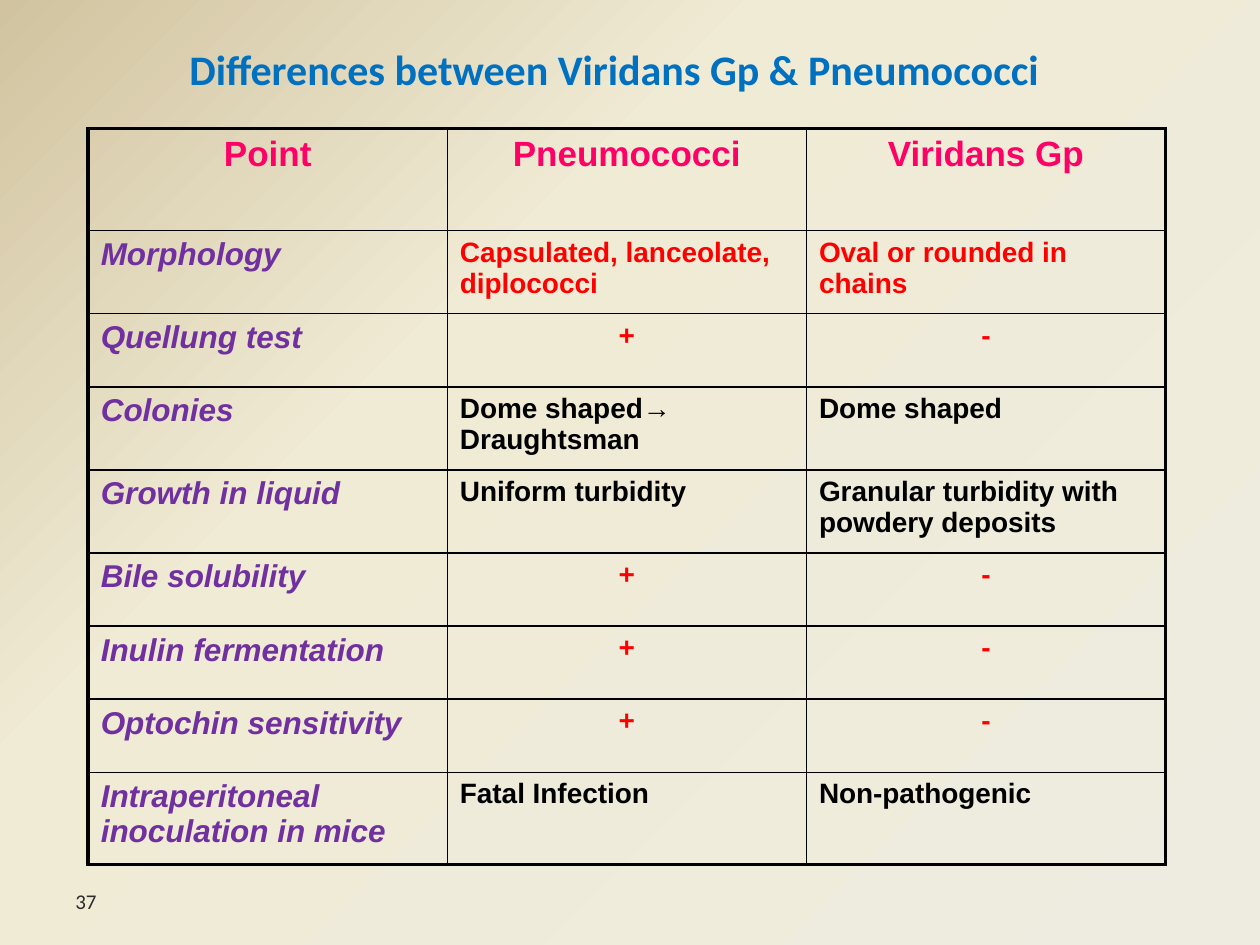
from pptx import Presentation
from pptx.dml.color import RGBColor
from pptx.enum.text import MSO_ANCHOR, PP_ALIGN
from pptx.oxml import parse_xml
from pptx.oxml.ns import nsdecls, qn
from pptx.util import Inches, Pt

LEFT, CENTER = PP_ALIGN.LEFT, PP_ALIGN.CENTER
MIDDLE = MSO_ANCHOR.MIDDLE

BLUE = RGBColor(0x00, 0x70, 0xC0)
PINK = RGBColor(0xFF, 0x00, 0x66)
PURPLE = RGBColor(0x70, 0x30, 0xA0)
RED = RGBColor(0xFF, 0x00, 0x00)
BLACK = RGBColor(0x00, 0x00, 0x00)
GREY = RGBColor(0x2C, 0x2C, 0x2C)
CREAM = RGBColor(0xEE, 0xEC, 0xE1)
SAND = RGBColor(0xF0, 0xEB, 0xD5)
TAN = RGBColor(0xD1, 0xC3, 0x9F)

THIN, THICK = 1, 2.25
COL = 2.85

HEAD = ("Point", "Pneumococci", "Viridans Gp")
# Row height, colour of the findings, then the three texts
ROWS = [
    (0.66, RED, "Morphology", "Capsulated, lanceolate, diplococci",
     "Oval or rounded in chains"),
    (0.58, RED, "Quellung test", "+", "-"),
    (0.66, BLACK, "Colonies", "Dome shaped→ Draughtsman", "Dome shaped"),
    (0.66, BLACK, "Growth in liquid", "Uniform turbidity",
     "Granular turbidity with powdery deposits"),
    (0.58, RED, "Bile solubility", "+", "-"),
    (0.58, RED, "Inulin fermentation", "+", "-"),
    (0.58, RED, "Optochin sensitivity", "+", "-"),
    (0.73, BLACK, "Intraperitoneal inoculation in mice",
     "Fatal Infection", "Non-pathogenic"),
]


def set_back(slide):
    """Fill the background with a gradient spreading from the lower right."""
    slide.background.fill.gradient()
    old = slide.element.find(".//" + qn("a:gradFill"))
    stops = "".join(
        f'<a:gs pos="{pos * 1000}"><a:srgbClr val="{color}"/></a:gs>'
        for pos, color in ((0, CREAM), (65, SAND), (100, TAN)))
    new = parse_xml(
        f'<a:gradFill {nsdecls("a")} rotWithShape="1"><a:gsLst>{stops}</a:gsLst>'
        '<a:path path="circle"><a:fillToRect l="100000" t="100000"/></a:path>'
        '</a:gradFill>')
    old.getparent().replace(old, new)


def add_run(para, text, size, color, font, bold=False, slant=False):
    run = para.add_run()
    run.text = text
    face = run.font
    face.name, face.size = font, Pt(size)
    face.bold, face.italic = bold, slant
    face.color.rgb = color


def set_title(slide):
    title = slide.shapes.title
    title.left, title.top = Inches(0.27), Inches(0.23)
    title.width, title.height = Inches(9.21), Inches(0.63)
    frame = title.text_frame
    frame.vertical_anchor = MIDDLE
    para = frame.paragraphs[0]
    para.alignment = CENTER
    add_run(para, "Differences between Viridans Gp & Pneumococci",
            24, BLUE, "Calibri", bold=True)


def add_number(slide):
    box = slide.shapes.add_textbox(Inches(0.5), Inches(6.95),
                                   Inches(2.33), Inches(0.4))
    frame = box.text_frame
    frame.word_wrap = True
    frame.vertical_anchor = MIDDLE
    para = frame.paragraphs[0]
    para.alignment = LEFT
    add_run(para, "37", 12, GREY, "Calibri")


def set_edges(cell, widths):
    """Draw the borders; widths are in points, for left, right, top, bottom."""
    props = cell._tc.get_or_add_tcPr()
    for place, (side, width) in enumerate(zip("LRTB", widths)):
        props.insert(place, parse_xml(
            f'<a:ln{side} {nsdecls("a")} w="{Pt(width)}"><a:solidFill>'
            f'<a:srgbClr val="{BLACK}"/></a:solidFill></a:ln{side}>'))


def fill_cell(cell, text, size, color, align, slant):
    cell.fill.background()
    para = cell.text_frame.paragraphs[0]
    para.alignment = align
    para._p.get_or_add_pPr().append(parse_xml(
        f'<a:spcBef {nsdecls("a")}><a:spcPct val="20000"/></a:spcBef>'))
    add_run(para, text, size, color, "Arial", bold=True, slant=slant)


def add_grid(slide):
    rows = [(0.81, PINK, *HEAD)] + ROWS
    high = sum(row[0] for row in rows)
    table = slide.shapes.add_table(
        len(rows), len(HEAD), Inches(0.7), Inches(1.02),
        Inches(COL * len(HEAD)), Inches(high)).table
    table.first_row = table.horz_banding = False
    for col in table.columns:
        col.width = Inches(COL)
    last_row, last_col = len(rows) - 1, len(HEAD) - 1
    for r, (height, tint, *texts) in enumerate(rows):
        table.rows[r].height = Inches(height)
        for c, text in enumerate(texts):
            cell = table.cell(r, c)
            label = r > 0 and c == 0
            size = 20 if r == 0 else 18 if label else 16
            align = CENTER if r == 0 or text in "+-" else LEFT
            fill_cell(cell, text, size, PURPLE if label else tint, align, label)
            outer = (c == 0, c == last_col, r == 0, r == last_row)
            set_edges(cell, [THICK if edge else THIN for edge in outer])


def main():
    deck = Presentation()
    deck.slide_width, deck.slide_height = Inches(10), Inches(7.5)
    slide = deck.slides.add_slide(deck.slide_layouts[5])
    set_back(slide)
    set_title(slide)
    add_number(slide)
    add_grid(slide)
    deck.save("out.pptx")


if __name__ == "__main__":
    main()
